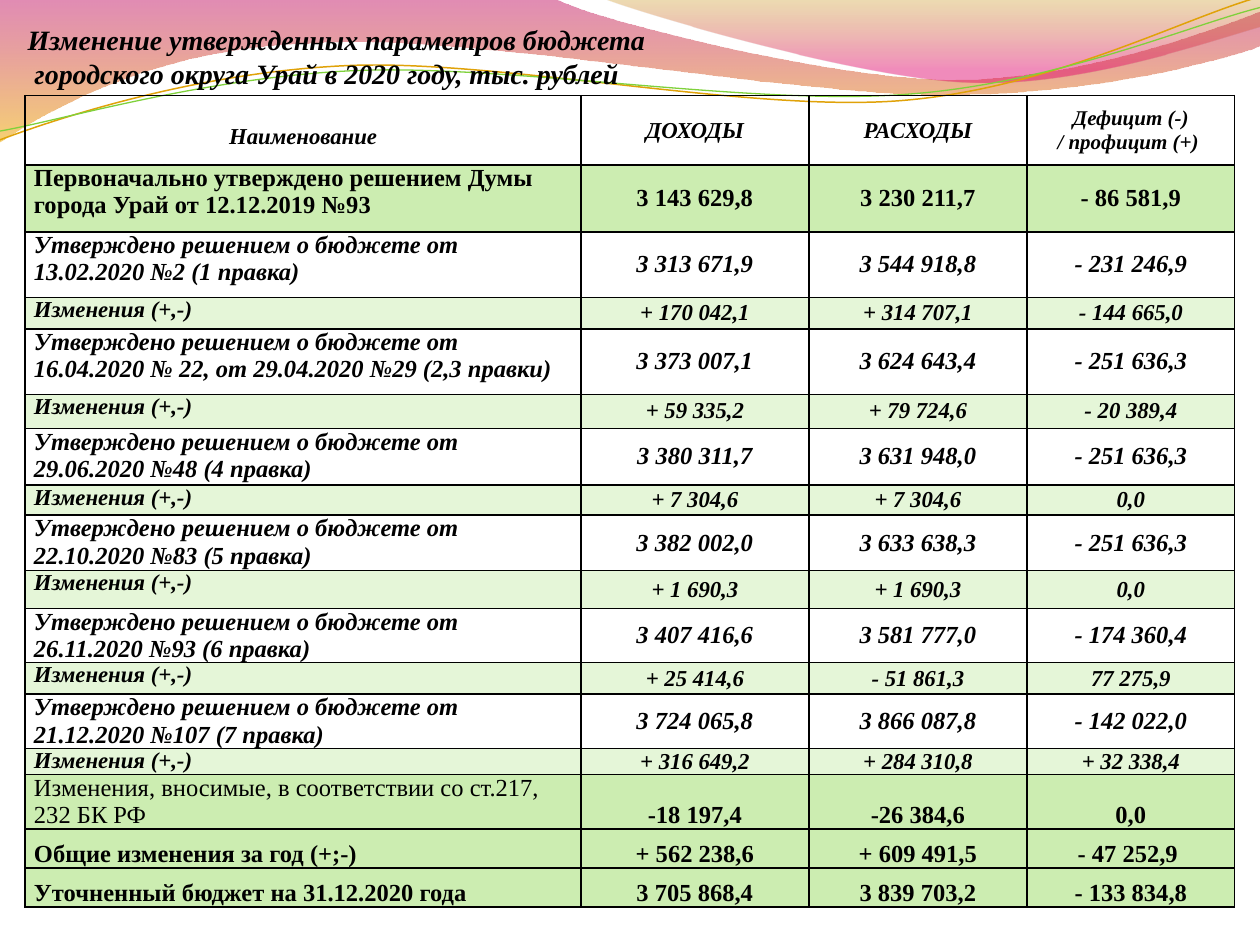
from math import cos, radians, sin

from lxml.etree import SubElement
from pptx import Presentation
from pptx.dml.color import RGBColor
from pptx.enum.text import MSO_ANCHOR, PP_ALIGN
from pptx.oxml.ns import qn
from pptx.util import Inches, Pt

color = RGBColor.from_string
unit = Inches(0.1)


def write(frame, text, size=14, bold=True, italic=True, align=PP_ALIGN.LEFT, spacing=None):
    frame.word_wrap = True
    for index, line in enumerate(text.split("\n")):
        paragraph = frame.paragraphs[0] if index == 0 else frame.add_paragraph()
        paragraph.alignment = align
        paragraph.line_spacing = spacing
        run = paragraph.add_run()
        run.text = line
        run.font.name = "Times New Roman"
        run.font.size = Pt(size)
        run.font.bold = bold
        run.font.italic = italic
        run.font.color.rgb = color("000000")


def draw_wave(shapes, start, pieces, close, tilt=0):
    middle_x, middle_y = 49.9, 5.75
    turn = radians(-tilt)
    flat = [start]
    for piece in pieces:
        flat += zip(piece[::2], piece[1::2])
    points = [((middle_x + (x - middle_x) * cos(turn) - (y - middle_y) * sin(turn)) * unit,
               (middle_y + (x - middle_x) * sin(turn) + (y - middle_y) * cos(turn)) * unit)
              for x, y in flat]
    builder = shapes.build_freeform(*points[0])
    builder.add_line_segments(points[1:], close=close)
    wave = builder.convert_to_shape()
    wave.shadow.inherit = False
    wave.rotation = tilt
    segments = iter(list(wave.element.iter(qn("a:lnTo"))))
    for piece in pieces:
        segment = next(segments)
        if len(piece) == 6:
            segment.tag = qn("a:cubicBezTo")
            for extra in (next(segments), next(segments)):
                segment.append(extra[0])
                extra.getparent().remove(extra)
    return wave


prs = Presentation()
prs.slide_width = 100 * unit
prs.slide_height = 75 * unit
slide = prs.slides.add_slide(prs.slide_layouts[6])

bands = [
    ((-0.1, -0.1),
     [(44, -0.1), (47.6, 1.7, 66.4, 6.3, 75.8, 6.3), (85.3, 6.3, 95.8, 2.6, 100, 0.9),
      (100.1, 3.6), (98.3, 4.4, 87, 7.6, 74.6, 7.5), (62.2, 7.5, 38.2, 2.8, 25.7, 3.4),
      (12.9, 3.6, 4.6, 8.3, -0.1, 11.3)],
     [(0, "BD0059", 45), (100, "F0AB00", 55)]),
    ((47.9, -0.1),
     [(50.9, 1.1, 68.2, 6.2, 76.9, 6.5), (85.6, 6.9, 96.1, 3.2, 100, 2.1), (100, 0)],
     [(0, "C38B00", 30), (80, "E1006B", 45)]),
]
for start, pieces, stops in bands:
    band = draw_wave(slide.shapes, start, pieces, True)
    band.line.fill.background()
    band.fill.gradient()
    band.fill.gradient_angle = 270
    for stop, (position, tint, opacity) in zip(band.fill.gradient_stops, stops):
        stop.position = position / 100
        stop.color.rgb = color(tint)
    for tint_xml, (position, tint, opacity) in zip(band.element.iter(qn("a:srgbClr")), stops):
        SubElement(tint_xml, qn("a:alpha"), val=str(opacity * 1000))

threads = [
    ((0, 11.1), [(4.8, 9.3, 15.8, 5.7, 27.7, 5.2), (39.5, 4.7, 59.3, 8.9, 71.3, 8),
                 (83.3, 7.1, 93.8, 1.5, 99.8, -0.2)], "E0A209", 0.85),
    ((0, 10.4), [(4.7, 9.6, 16.4, 6.1, 28.3, 5.6), (40.3, 5.1, 59.7, 8.4, 71.7, 7.5),
                 (83.6, 6.7, 94.1, 2.1, 100, 0.6)], "7FD13B", 0.75),
]
for start, pieces, tint, width in threads:
    thread = draw_wave(slide.shapes, start, pieces, False, tilt=357.3)
    thread.fill.background()
    thread.line.color.rgb = color(tint)
    thread.line.width = Pt(width)

revisions = [
    ("13.02.2020 №2 (1 правка)", 5.2, "3 313 671,9", "3 544 918,8", "- 231 246,9",
     2.5, "+ 170 042,1", "+ 314 707,1", "- 144 665,0"),
    ("16.04.2020 № 22, от 29.04.2020 №29 (2,3 правки)", 5.2, "3 373 007,1", "3 624 643,4",
     "- 251 636,3", 2.7, "+ 59 335,2", "+ 79 724,6", "- 20 389,4"),
    ("29.06.2020 №48 (4 правка)", 4.5, "3 380 311,7", "3 631 948,0", "- 251 636,3",
     2.4, "+ 7 304,6", "+ 7 304,6", "0,0"),
    ("22.10.2020 №83 (5 правка)", 4.4, "3 382 002,0", "3 633 638,3", "- 251 636,3",
     3, "+ 1 690,3", "+ 1 690,3", "0,0"),
    ("26.11.2020 №93 (6 правка)", 3.6, "3 407 416,6", "3 581 777,0", "- 174 360,4",
     2.5, "+ 25 414,6", "- 51 861,3", "77 275,9"),
    ("21.12.2020 №107 (7 правка)", 3.7, "3 724 065,8", "3 866 087,8", "- 142 022,0",
     2.1, "+ 316 649,2", "+ 284 310,8", "+ 32 338,4"),
]
budget = [
    ("header", 5.5, ["Наименование", "ДОХОДЫ", "РАСХОДЫ", "Дефицит (-)\n/ профицит (+) "]),
    ("initial", 5.3, ["Первоначально утверждено решением Думы города Урай от 12.12.2019 №93",
                      "3 143 629,8", "3 230 211,7", "- 86 581,9"]),
]
for decision, height, income, spending, balance, change_height, *changes in revisions:
    budget.append(("revision", height, [f"Утверждено решением о бюджете от {decision}",
                                        income, spending, balance]))
    budget.append(("change", change_height, ["Изменения (+,-)", *changes]))
budget += [
    ("total", 3.1, ["Изменения, вносимые, в соответствии со ст.217, 232 БК РФ",
                    "-18 197,4", "-26 384,6", "0,0"]),
    ("total", 3.1, ["Общие изменения за год (+;-)", "+ 562 238,6", "+ 609 491,5", "- 47 252,9 "]),
    ("total", 3.1, ["Уточненный бюджет на 31.12.2020 года",
                    "3 705 868,4", "3 839 703,2", "- 133 834,8"]),
]
fills = {"initial": "CCEDB1", "change": "E5F6D8", "total": "CCEDB1"}
sizes = {"header": 13, "change": 13}
column_widths = [44.1, 18.1, 17.3, 16.5]

table_frame = slide.shapes.add_table(len(budget), len(column_widths), int(2 * unit),
                                     int(7.6 * unit), int(96.1 * unit), int(66.2 * unit))
table = table_frame.table
table.first_row = False
table.horz_banding = False
for column, width in zip(table.columns, column_widths):
    column.width = int(width * unit)

for row_index, (kind, height, texts) in enumerate(budget):
    table.rows[row_index].height = int(height * unit)
    for column_index, text in enumerate(texts):
        cell = table.cell(row_index, column_index)
        cell.margin_left = cell.margin_right = int(0.7 * unit)
        cell.margin_top = cell.margin_bottom = 0
        is_name = column_index == 0
        if kind == "total":
            cell.vertical_anchor = MSO_ANCHOR.BOTTOM
        elif is_name and kind != "header":
            cell.vertical_anchor = MSO_ANCHOR.TOP
        else:
            cell.vertical_anchor = MSO_ANCHOR.MIDDLE
        write(cell.text_frame, text,
              size=12 if "\n" in text else sizes.get(kind, 14),
              bold=not text.startswith("Изменения, вносимые"),
              italic=kind not in ("initial", "total"),
              align=PP_ALIGN.LEFT if is_name and kind != "header" else PP_ALIGN.CENTER,
              spacing=1.5 if is_name and kind == "header" else None)
        properties = cell._tc.get_or_add_tcPr()
        for side in ("lnL", "lnR", "lnT", "lnB"):
            border = SubElement(properties, qn(f"a:{side}"), w=str(Pt(1)))
            solid = SubElement(border, qn("a:solidFill"))
            SubElement(solid, qn("a:srgbClr"), val="000000")
        if kind in fills:
            cell.fill.solid()
            cell.fill.fore_color.rgb = color(fills[kind])
        else:
            cell.fill.background()

table_frame.width = int(96.1 * unit)
table_frame.height = int(66.2 * unit)

title = slide.shapes.add_textbox(int(1.2 * unit), int(1.3 * unit), int(96.9 * unit), int(6.4 * unit))
write(title.text_frame,
      "Изменение утвержденных параметров бюджета\n городского округа Урай в 2020 году, тыс. рублей",
      size=16)

prs.save("out.pptx")
